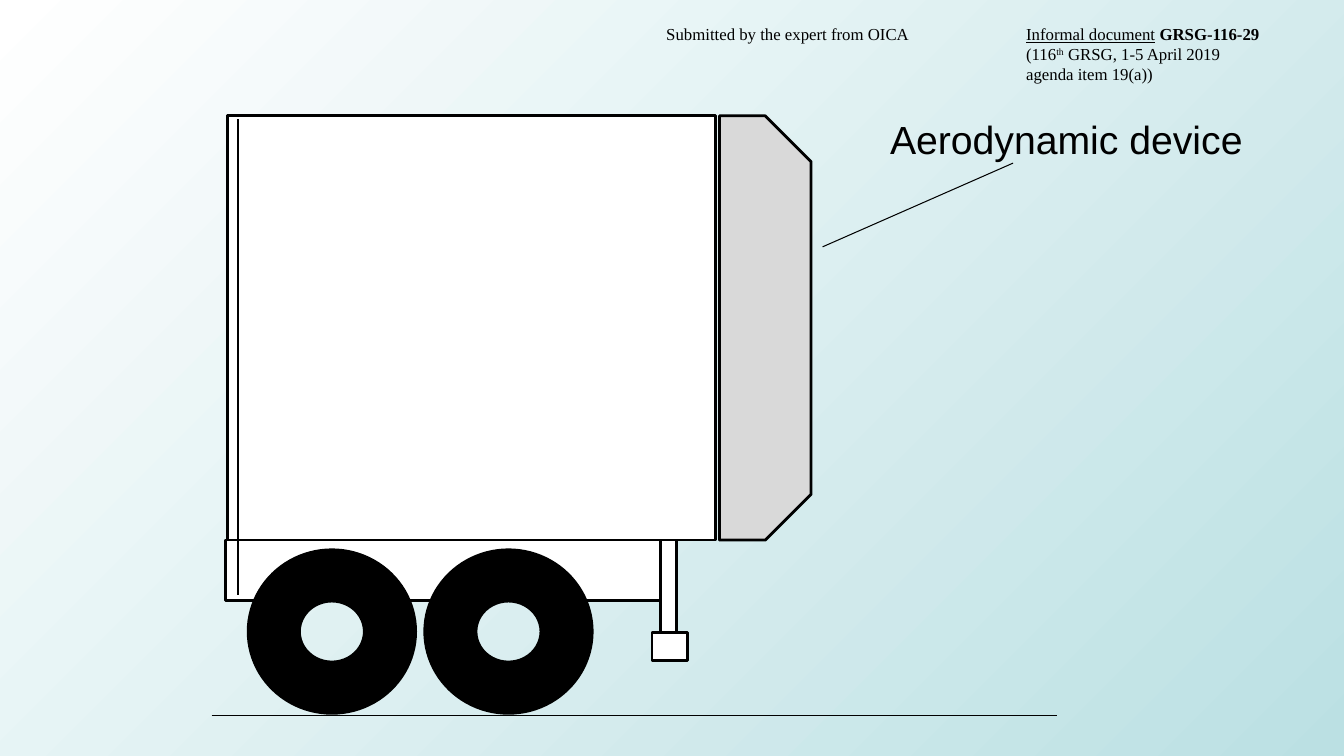
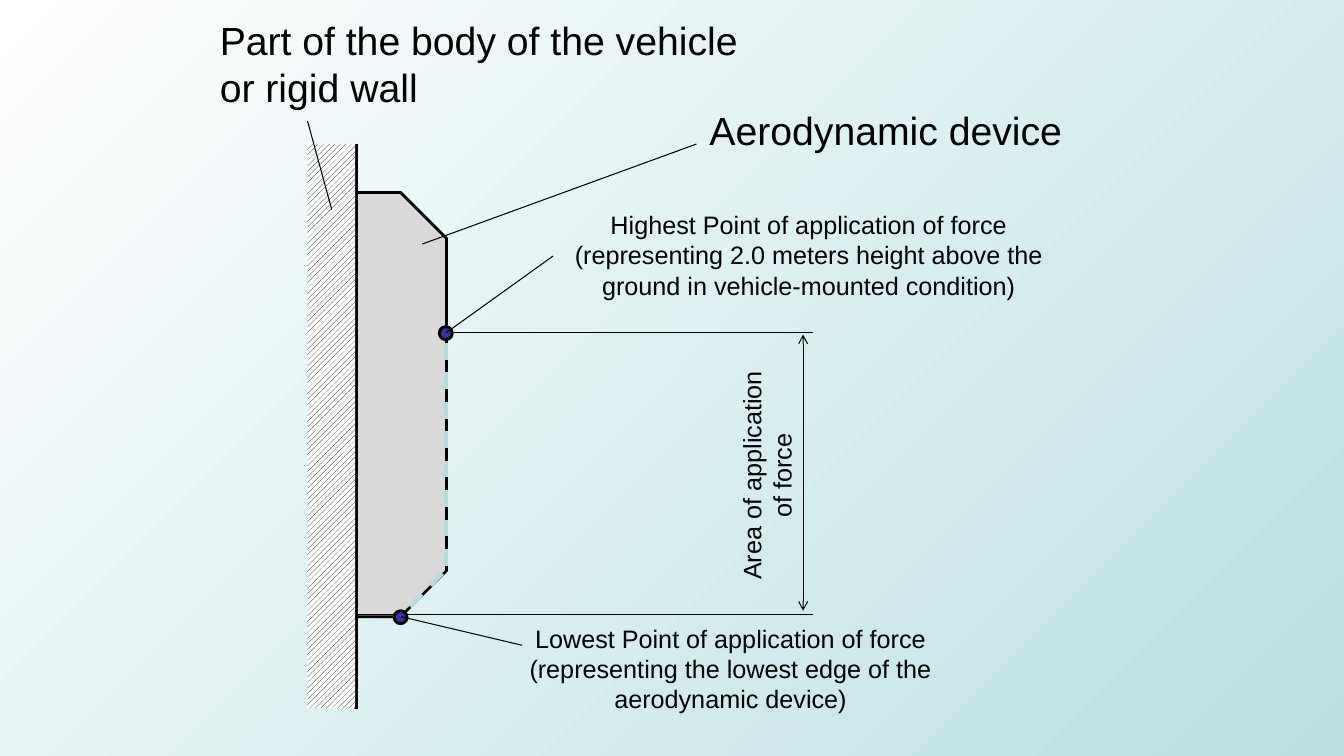
from pptx import Presentation
from pptx.dml.color import RGBColor
from pptx.enum.dml import MSO_LINE, MSO_PATTERN
from pptx.enum.shapes import MSO_CONNECTOR, MSO_SHAPE
from pptx.enum.text import PP_ALIGN
from pptx.oxml.ns import qn
from pptx.util import Cm, Pt
from lxml.etree import SubElement

HUES = {
    "ink": "000000", "white": "FFFFFF", "aqua": "BBE0E3",
    "gray": "D9D9D9", "dot": "333399", "dash": "B6DCDF",
}
PLAIN = "{2D5ABB26-0587-4C30-8999-92F81FD0307C}"
EDGE = [
    (5.56, 2.92), (5.69, 3.02), (5.79, 3.2), (5.89, 3.35), (6.05, 3.51),
    (6.17, 3.66), (6.32, 3.91), (6.38, 3.99), (6.45, 4.24), (6.43, 4.75),
    (6.38, 5.03), (6.35, 5.31), (6.25, 5.64), (6.17, 5.99), (6.12, 6.3),
    (6.15, 7.26), (6.2, 7.72), (6.17, 8.61), (6.12, 8.84), (6.07, 9.12),
    (6.12, 10.03), (6.15, 10.11), (6.1, 11.1), (6.07, 11.18), (6.1, 11.58),
    (6.17, 11.84), (6.15, 13.06), (6.1, 13.49), (5.99, 14.05), (5.97, 14.35),
    (5.87, 14.81), (5.77, 15.04), (5.64, 15.06), (5.54, 15.14),
]


def hue(name):
    return RGBColor.from_string(HUES[name])


def write(frame, rows, size=18, font="Arial", align=PP_ALIGN.LEFT, space=None):
    frame.word_wrap = True
    for i, row in enumerate(rows):
        para = frame.add_paragraph() if i else frame.paragraphs[0]
        para.alignment = align
        para.line_spacing = space
        for part in [(row, "")] if isinstance(row, str) else row:
            text, mark = part
            run = para.add_run()
            run.text = text
            run.font.size = Pt(size)
            run.font.name = font
            run.font.color.rgb = hue("ink")
            if mark == "bold":
                run.font.bold = True
            elif mark == "under":
                run.font.underline = True
            elif mark == "super":
                run._r.get_or_add_rPr().set("baseline", "30000")


class Deck:
    def __init__(self):
        self.file = Presentation()
        self.file.slide_width = Cm(33.87)
        self.file.slide_height = Cm(19.05)
        fill = self.file.slide_master.background.fill
        fill.gradient()
        fill.gradient_angle = 315
        for stop, name in zip(fill.gradient_stops, ("white", "aqua")):
            stop.color.rgb = hue(name)

    def page(self):
        self.slide = self.file.slides.add_slide(self.file.slide_layouts[6])
        self.shapes = self.slide.shapes

    def style(self, shape, fill, line):
        shape.shadow.inherit = False
        if fill:
            shape.fill.solid()
            shape.fill.fore_color.rgb = hue(fill)
        if line:
            shape.line.color.rgb = hue("ink")
            shape.line.width = Pt(line)
        else:
            shape.line.fill.background()
        return shape

    def shape(self, kind, *box, fill="white", line=2):
        return self.style(self.shapes.add_shape(kind, *map(Cm, box)), fill, line)

    def rect(self, *box, **look):
        return self.shape(MSO_SHAPE.RECTANGLE, *box, **look)

    def curve(self, points):
        pen = self.shapes.build_freeform(*points[0], scale=Cm(1))
        pen.add_line_segments(points[1:], close=False)
        self.style(pen.convert_to_shape(), "white", 2)

    def line(self, x, y, right, down, width=0.75, color="ink", dash=False, arrow=False):
        link = self.shapes.add_connector(
            MSO_CONNECTOR.STRAIGHT, *map(Cm, (x, y, right, down)))
        link.line.color.rgb = hue(color)
        link.line.width = Pt(width)
        if dash:
            link.line.dash_style = MSO_LINE.DASH
        if arrow:
            for end in ("a:headEnd", "a:tailEnd"):
                SubElement(link.line._get_or_add_ln(), qn(end), type="arrow")
        SubElement(link._element.spPr, qn("a:effectLst"))

    def text(self, x, y, wide, high, *rows, turn=0, **look):
        box = self.shapes.add_textbox(*map(Cm, (x, y, wide, high)))
        box.rotation = turn
        frame = box.text_frame
        frame.margin_left = frame.margin_right = 0
        frame.margin_top = frame.margin_bottom = 0
        write(frame, rows, **look)

    def note(self, *args, **look):
        self.text(*args, align=PP_ALIGN.CENTER, **look)

    def table(self, x, y, wides, high, cells):
        frame = self.shapes.add_table(
            1, len(wides), *map(Cm, (x, y, sum(wides), high)))
        table = frame.table
        table.first_row = table.horz_banding = False
        for tag in frame._element.iter(qn("a:tableStyleId")):
            tag.text = PLAIN
        for i, (wide, rows) in enumerate(zip(wides, cells)):
            table.columns[i].width = Cm(wide)
            cell = table.cell(0, i)
            cell.fill.background()
            cell.margin_left = cell.margin_right = Cm(0.15)
            cell.margin_top = cell.margin_bottom = 0
            write(cell.text_frame, rows, size=12, font="Times New Roman", space=1.07)

    def device(self, x, y):
        snip = self.shape(MSO_SHAPE.SNIP_2_SAME_RECTANGLE, x, y, 10.69, 2.31, fill="gray")
        snip.rotation = 90
        snip.adjustments[0] = 0.5
        snip.adjustments[1] = 0

    def label(self, x, y):
        self.text(x, y, 9.8, 1.6, "Aerodynamic device", size=28)

    def dot(self, x, y):
        self.shape(MSO_SHAPE.OVAL, x, y, 0.33, 0.33, fill="dot")


def truck(deck):
    deck.page()
    deck.line(5.33, 18.03, 26.64, 18.03)
    deck.rect(5.74, 2.92, 12.29, 10.69)
    deck.rect(5.69, 13.61, 11.35, 1.52)
    for x in (10.67, 6.22):
        wheel = deck.shape(MSO_SHAPE.DONUT, x, 13.82, 4.29, 4.19, fill="ink", line=0)
        wheel.adjustments[0] = 0.325
    deck.curve(EDGE)
    deck.rect(16.64, 13.61, 0.41, 2.59)
    deck.rect(16.43, 15.93, 0.89, 0.71)
    deck.device(13.94, 7.11)
    deck.label(22.43, 2.9)
    deck.line(20.73, 6.22, 25.53, 4.11)
    deck.table(16.64, 0.61, (9.07, 8.15), 1.6, [
        ["Submitted by the expert from OICA"],
        [[("Informal document", "under"), (" ", ""), ("GRSG-116-29", "bold")],
         [("(116", ""), ("th", "super"), (" GRSG, 1-5 April 2019", "")],
         "agenda item 19(a))"],
    ])


def force(deck):
    deck.page()
    deck.device(4.75, 9.04)
    deck.label(17.88, 2.69)
    deck.line(10.64, 6.15, 17.55, 3.63)
    deck.line(8.97, 3.63, 8.97, 17.86, width=3)
    wall = deck.rect(7.75, 3.63, 1.2, 14.22, fill=None, line=0)
    wall.fill.patterned()
    wall.fill.pattern = MSO_PATTERN.WIDE_UPWARD_DIAGONAL
    wall.fill.fore_color.rgb = hue("ink")
    wall.fill.back_color.rgb = hue("white")
    deck.line(11.43, 8.38, 20.5, 8.38)
    deck.line(8.97, 15.49, 20.5, 15.49)
    deck.line(20.24, 8.43, 20.24, 15.39, arrow=True)
    deck.note(11.96, 15.7, 12.9, 2.92, "Lowest Point of application of force",
              "(representing the lowest edge of the aerodynamic device)")
    deck.dot(9.93, 15.39)
    deck.line(13.16, 16.26, 10.11, 15.54)
    deck.note(14.12, 5.28, 12.52, 2.92, "Highest Point of application of force",
              "(representing 2.0 meters height above the ground in vehicle-mounted condition)")
    deck.dot(11.07, 8.23)
    deck.line(13.94, 6.45, 11.25, 8.38)
    deck.note(17.17, 10.52, 5.69, 2.92, "Area of application of force", turn=270)
    deck.text(5.54, 0.41, 13.49, 1.6, "Part of the body of the vehicle or rigid wall", size=28)
    deck.line(8.36, 5.28, 7.75, 3.05)
    deck.line(11.23, 8.64, 11.23, 14.45, width=3, color="dash", dash=True)
    deck.line(11.15, 14.45, 10.13, 15.49, width=3, color="dash", dash=True)


def main():
    deck = Deck()
    truck(deck)
    force(deck)
    deck.file.save("out.pptx")


if __name__ == "__main__":
    main()
